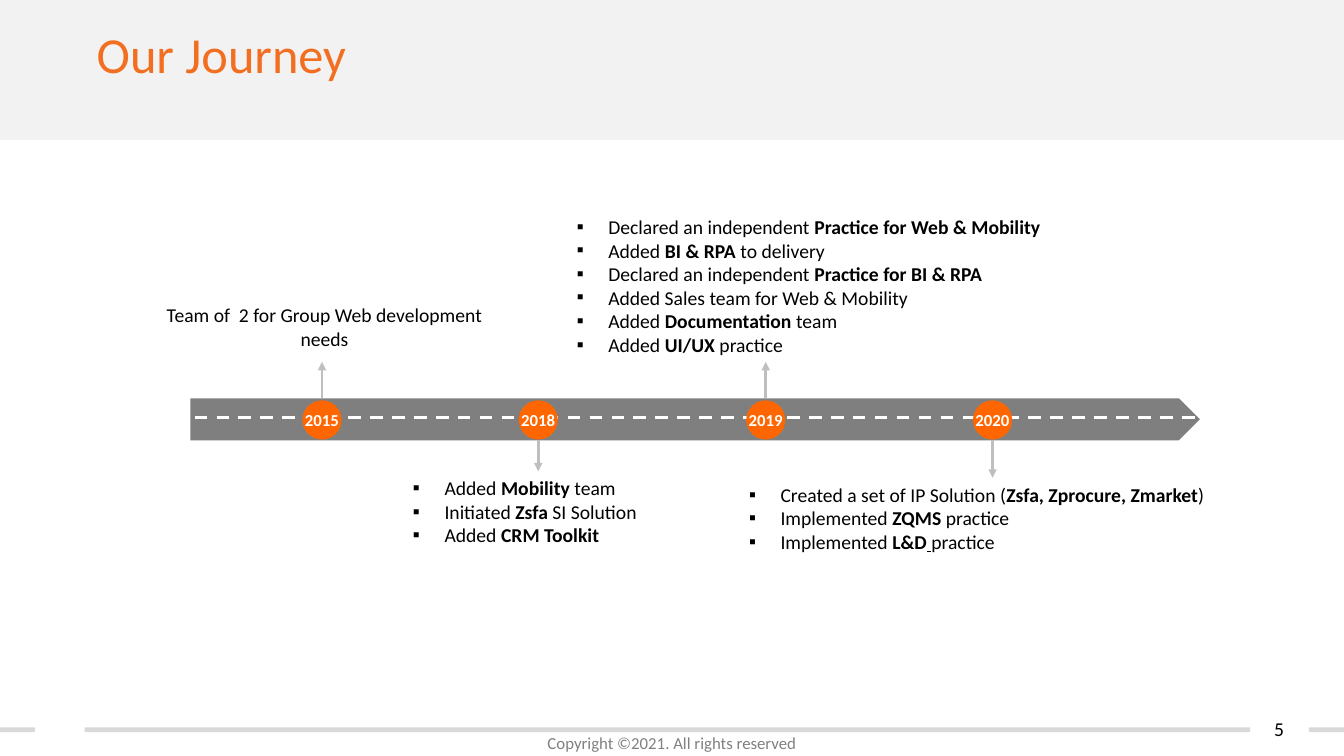
"""Build the "Our Journey" timeline slide."""
from lxml.etree import SubElement
from pptx import Presentation
from pptx.dml.color import RGBColor
from pptx.enum.dml import MSO_LINE
from pptx.enum.shapes import MSO_CONNECTOR, MSO_SHAPE
from pptx.enum.text import MSO_ANCHOR, PP_ALIGN
from pptx.oxml.ns import qn
from pptx.util import Pt


def color(hex_string):
    return RGBColor.from_string(hex_string)


def write(box, paragraphs, size, ink, align=PP_ALIGN.LEFT, side=0, bulleted=False):
    frame = box.text_frame
    frame.word_wrap = True
    frame.margin_left = frame.margin_right = Pt(side)
    frame.margin_top = frame.margin_bottom = Pt(3.6)
    for index, runs in enumerate(paragraphs):
        paragraph = frame.add_paragraph() if index else frame.paragraphs[0]
        paragraph.alignment = align
        if bulleted:
            properties = paragraph._p.get_or_add_pPr()
            properties.set("marL", str(Pt(22.5)))
            properties.set("indent", str(-Pt(22.5)))
            SubElement(properties, qn("a:buFont"), typeface="Calibri")
            SubElement(properties, qn("a:buChar"), char="▪")
        for words, style in runs:
            run = paragraph.add_run()
            run.text = words
            run.font.name = "Calibri"
            run.font.size = Pt(size)
            run.font.color.rgb = color(ink)
            run.font.bold = "b" in style
            run.font.underline = "u" in style
    return frame


prs = Presentation()
prs.slide_width, prs.slide_height = Pt(960), Pt(540)
slide = prs.slides.add_slide(prs.slide_layouts[6])
shapes = slide.shapes

CENTER_Y, DOT = 300, 28
years = [("2015", 230), ("2018", 384.5), ("2019", 547), ("2020", 709)]

solids = [
    (MSO_SHAPE.RECTANGLE, 0, 0, 960, 100, "F2F2F2"),
    (MSO_SHAPE.RECTANGLE, 60.5, 519.5, 832.5, 3.5, "D9D9D9"),
    (MSO_SHAPE.RECTANGLE, 935, 519.5, 25, 3.5, "D9D9D9"),
    (MSO_SHAPE.RECTANGLE, 0, 519.5, 25, 3.5, "D9D9D9"),
    (MSO_SHAPE.PENTAGON, 136, 284.5, 721, 30, "7F7F7F"),
]
dots = [(MSO_SHAPE.OVAL, x - DOT / 2, CENTER_Y - DOT / 2, DOT, DOT, "FF6600") for _, x in years]

drawn = []
for kind, left, top, width, height, fill in solids + dots:
    solid = shapes.add_shape(kind, Pt(left), Pt(top), Pt(width), Pt(height))
    solid.shadow.inherit = False
    solid.fill.solid()
    solid.fill.fore_color.rgb = color(fill)
    solid.line.fill.background()
    drawn.append(solid)
    if kind == MSO_SHAPE.PENTAGON:
        lane = shapes.add_connector(MSO_CONNECTOR.STRAIGHT, Pt(139), Pt(298.5), Pt(859.5), Pt(298.5))
        lane.line.color.rgb = color("FFFFFF")
        lane.line.width = Pt(2.25)
        lane.line.dash_style = MSO_LINE.DASH
        SubElement(lane._element.spPr, qn("a:effectLst"))

for (year, _), dot in zip(years, drawn[len(solids):]):
    label = write(dot, [[(year, "b")]], 12, "FFFFFF", PP_ALIGN.CENTER)
    label.word_wrap = False
    label.vertical_anchor = MSO_ANCHOR.MIDDLE

title = shapes.add_textbox(Pt(26.5), Pt(13), Pt(854), Pt(51))
write(title, [[("Our Journey", "")]], 36, "F26F21", side=7.2)
title.text_frame.paragraphs[0]._p.get_or_add_pPr().set("marL", str(Pt(35.5)))

copyright_line = shapes.add_textbox(0, Pt(519.5), Pt(960), Pt(22))
write(copyright_line, [[("Copyright ©2021. All rights reserved", "")]], 12, "808080", PP_ALIGN.CENTER)

page_number = shapes.add_textbox(Pt(894), Pt(506), Pt(39.5), Pt(29))
number_frame = write(page_number, [[("5", "")]], 14, "000000", PP_ALIGN.CENTER)
number_frame.vertical_anchor = MSO_ANCHOR.MIDDLE

milestones = [
    (118.8, 213, 226, 41, [[("Team of  2 for Group Web development needs", "")]]),
    (295, 336.7, 179, 58, [
        [("Added ", ""), ("Mobility", "b"), (" team", "")],
        [("Initiated ", ""), ("Zsfa", "b"), (" SI Solution", "")],
        [("Added ", ""), ("CRM Toolkit", "b")],
    ]),
    (412, 150, 348, 109, [
        [("Declared an independent ", ""), ("Practice for Web & Mobility", "b")],
        [("Added ", ""), ("BI & RPA ", "b"), ("to delivery", "")],
        [("Declared an independent ", ""), ("Practice for BI & RPA", "b")],
        [("Added Sales team for Web & Mobility", "")],
        [("Added ", ""), ("Documentation", "b"), (" team", "")],
        [("Added ", ""), ("UI/UX ", "b"), ("practice", "")],
    ]),
    (535, 341.3, 348, 58, [
        [("Created a set of IP Solution (", ""), ("Zsfa, Zprocure, Zmarket", "b"), (")", "")],
        [("Implemented ", ""), ("ZQMS", "b"), (" practice", "")],
        [("Implemented ", ""), ("L&D", "b"), (" ", "bu"), ("practice", "")],
    ]),
]
for (_, x), (left, top, width, height, paragraphs) in zip(years, milestones):
    story = shapes.add_textbox(Pt(left), Pt(top), Pt(width), Pt(height))
    bulleted = len(paragraphs) > 1
    write(story, paragraphs, 14, "000000", PP_ALIGN.LEFT if bulleted else PP_ALIGN.CENTER, bulleted=bulleted)
    below = top > CENTER_Y
    start, end = (314, top) if below else (284.5, 258.5)
    arrow = shapes.add_connector(MSO_CONNECTOR.STRAIGHT, Pt(x), Pt(start), Pt(x), Pt(end))
    if below:
        arrow.end_connect(story, 0)
    arrow.line.color.rgb = color("BFBFBF")
    arrow.line.width = Pt(2)
    SubElement(arrow.line._get_or_add_ln(), qn("a:tailEnd"), type="triangle")
    SubElement(arrow._element.spPr, qn("a:effectLst"))

prs.save("out.pptx")
